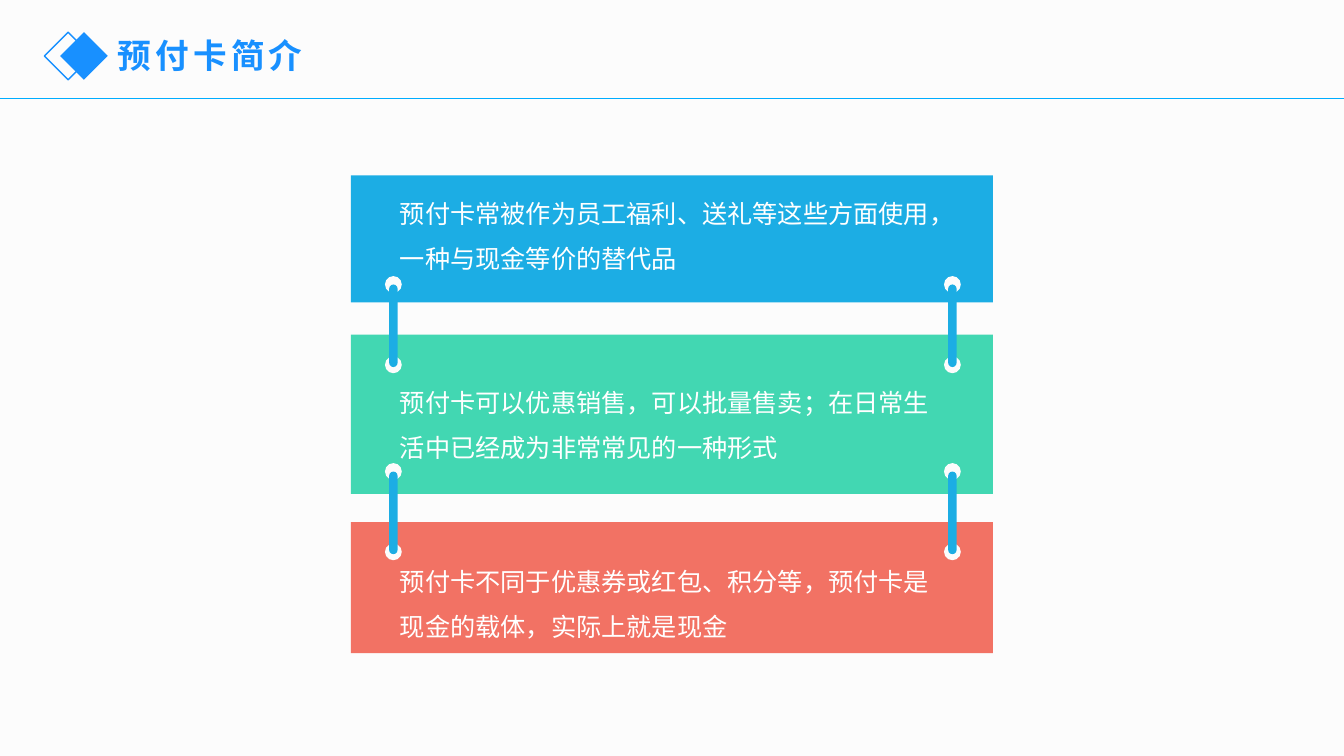
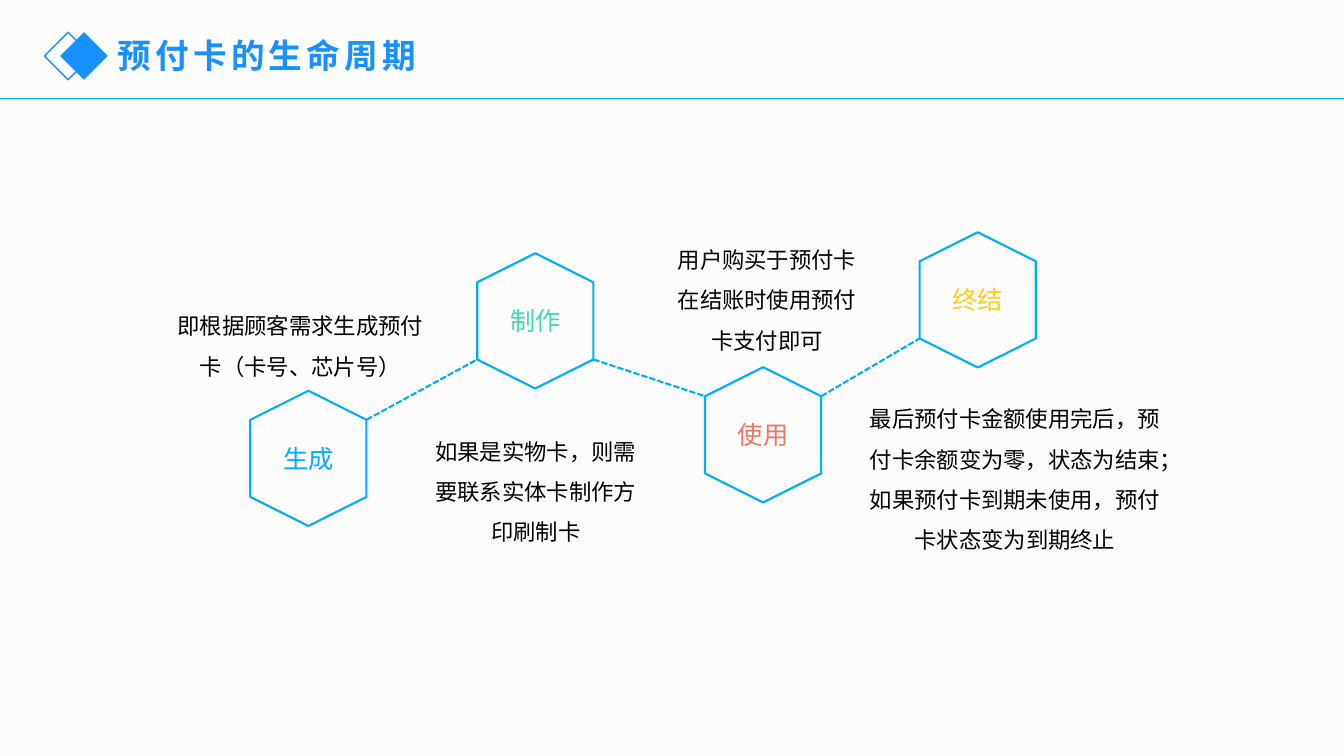
from dataclasses import dataclass
from itertools import pairwise, product

from lxml import etree
from pptx import Presentation
from pptx.dml.color import RGBColor
from pptx.enum import dml, shapes, text
from pptx.oxml.ns import qn
from pptx.util import Pt


@dataclass(frozen=True)
class Theme:
    font: str = "Noto Sans CJK SC"
    paper: str = "FCFCFC"
    heading: str = "1890FF"
    outline: str = "00ADFF"
    blue: str = "1CADE4"
    green: str = "42D7B2"
    red: str = "F27264"
    yellow: str = "FFCC21"
    white: str = "FFFFFF"
    black: str = "000000"
    title_size: int = 24
    body_size: int = 18
    note_size: int = 16


THEME = Theme()
SLIDE_W, SLIDE_H = 960, 540
SHAPE = shapes.MSO_SHAPE
ALIGN = text.PP_ALIGN

BAND_LEFT, BAND_W = 250.6, 458.6
# top, height, colour, text top, text width, wording
BANDS = [
    (125.3, 90.7, THEME.blue, 127.4, 421,
     "预付卡常被作为员工福利、送礼等这些方面使用，一种与现金等价的替代品"),
    (239, 113.8, THEME.green, 262.1, 408,
     "预付卡可以优惠销售，可以批量售卖；在日常生活中已经成为非常常见的一种形式"),
    (373, 93.6, THEME.red, 390.2, 395,
     "预付卡不同于优惠券或红包、积分等，预付卡是现金的载体，实际上就是现金"),
]
LINK_CENTRES, LINK_TOPS = (281, 680.3), (197.2, 330.8)
RING, RING_GAP = 12, 57.4
PIN_W, PIN_H = 6, 59

HEX_LENGTH, HEX_W = 96.6, 83
HEX_HALF_SIDE = HEX_LENGTH / 2 - HEX_W / 4
# hexagon centre, label, colour, note box, note
STAGES = [
    (220.3, 327.4, "生成", THEME.outline, (116.6, 210.2, 196, 61),
     "即根据顾客需求生成预付卡（卡号、芯片号）"),
    (382.4, 229.2, "制作", THEME.green, (301, 299.5, 163.4, 90),
     "如果是实物卡，则需要联系实体卡制作方印刷制卡"),
    (545.1, 310.6, "使用", THEME.red, (470.2, 162.7, 155.5, 90),
     "用户购买于预付卡在结账时使用预付卡支付即可"),
    (698.4, 214.2, "终结", THEME.yellow, (612, 276.5, 226, 119),
     "最后预付卡金额使用完后，预付卡余额变为零，状态为结束；"
     "如果预付卡到期未使用，预付卡状态变为到期终止"),
]


def rgb(value):
    return RGBColor.from_string(value)


def points(*lengths):
    return [Pt(length) for length in lengths]


def write(frame, wording, size, color, align=ALIGN.LEFT, spacing=1.0,
          anchor=text.MSO_ANCHOR.TOP):
    """Fill a text frame with one paragraph and return its run."""
    frame.text = wording
    frame.word_wrap = True
    frame.auto_size = text.MSO_AUTO_SIZE.NONE
    frame.vertical_anchor = anchor
    paragraph = frame.paragraphs[0]
    paragraph.alignment = align
    paragraph.line_spacing = spacing
    run = paragraph.runs[0]
    run.font.size = Pt(size)
    run.font.name = THEME.font
    run.font.color.rgb = rgb(color)
    east_asian = etree.SubElement(run.font._element, qn("a:ea"))
    east_asian.set("typeface", THEME.font)
    return run


def add_text(slide, box, *args, **kwargs):
    write(slide.shapes.add_textbox(*points(*box)).text_frame, *args, **kwargs)


def add_figure(slide, kind, box, fill=None, line=None, weight=1.5):
    figure = slide.shapes.add_shape(kind, *points(*box))
    figure.shadow.inherit = False
    if fill:
        figure.fill.solid()
        figure.fill.fore_color.rgb = rgb(fill)
    else:
        figure.fill.background()
    if line:
        figure.line.color.rgb = rgb(line)
        figure.line.width = Pt(weight)
    else:
        figure.line.fill.background()
    return figure


def add_line(slide, start, end, weight, dash=None):
    line = slide.shapes.add_connector(
        shapes.MSO_CONNECTOR.STRAIGHT, *points(*start, *end))
    line.line.color.rgb = rgb(THEME.outline)
    line.line.width = Pt(weight)
    if dash:
        line.line.dash_style = dash
    etree.SubElement(line._element.spPr, qn("a:effectLst"))
    return line


def add_header(slide):
    """Draw the rule and the twin diamonds, and move them to the layout."""
    layout = slide.slide_layout
    for placeholder in list(layout.placeholders):
        if placeholder.placeholder_format.type != shapes.PP_PLACEHOLDER.TITLE:
            placeholder._element.getparent().remove(placeholder._element)
    header = [
        add_line(slide, (0, 70.5), (SLIDE_W, 70.5), 1),
        add_figure(slide, SHAPE.DIAMOND, (31.7, 23, 34, 34),
                   line=THEME.heading, weight=1),
        add_figure(slide, SHAPE.DIAMOND, (43, 23, 34, 34), THEME.heading),
    ]
    for part in header:
        layout.shapes._spTree.append(part._element)


def add_titled_slide(prs, wording):
    slide = prs.slides.add_slide(prs.slide_layouts[5])
    title = slide.shapes.title
    title.left, title.top, title.width, title.height = points(77, 21.6, 395, 36)
    run = write(title.text_frame, wording, THEME.title_size, THEME.heading,
                anchor=text.MSO_ANCHOR.MIDDLE)
    run.font.bold = True
    run.font._element.set("spc", "300")
    return slide


def add_link(slide, centre, top):
    """Join two bands with a pin between two rings."""
    for ring_top in (top, top + RING_GAP):
        add_figure(slide, SHAPE.OVAL,
                   (centre - RING / 2, ring_top, RING, RING), THEME.paper)
    pin = add_figure(slide, SHAPE.ROUNDED_RECTANGLE,
                     (centre - PIN_W / 2, top + RING / 2, PIN_W, PIN_H),
                     THEME.blue)
    pin.adjustments[0] = 0.5


def fill_introduction(slide):
    for top, height, color, *_ in BANDS:
        add_figure(slide, SHAPE.RECTANGLE,
                   (BAND_LEFT, top, BAND_W, height), color)
    for top, centre in product(LINK_TOPS, LINK_CENTRES):
        add_link(slide, centre, top)
    for *_, text_top, width, wording in BANDS:
        add_text(slide, (278.6, text_top, width, 72), wording,
                 THEME.body_size, THEME.white, spacing=1.5)


def add_stage(slide, x, y, label, color, note_box, note):
    hexagon = add_figure(
        slide, SHAPE.HEXAGON,
        (x - HEX_LENGTH / 2, y - HEX_W / 2, HEX_LENGTH, HEX_W),
        line=THEME.outline)
    hexagon.rotation = 270
    add_text(slide, (x - 36, y - 14.4, 72, 28.8), label, THEME.body_size,
             color, ALIGN.CENTER, anchor=text.MSO_ANCHOR.MIDDLE)
    add_text(slide, note_box, note, THEME.note_size, THEME.black,
             ALIGN.CENTER, spacing=1.5)


def fill_life_cycle(slide):
    for stage in STAGES:
        add_stage(slide, *stage)
    for (x1, y1, *_), (x2, y2, *_) in pairwise(STAGES):
        drop = HEX_HALF_SIDE if y2 > y1 else -HEX_HALF_SIDE
        add_line(slide, (x1 + HEX_W / 2, y1 + drop),
                 (x2 - HEX_W / 2, y2 - drop), 1.5,
                 dml.MSO_LINE.SQUARE_DOT)


def main():
    prs = Presentation()
    prs.slide_width, prs.slide_height = points(SLIDE_W, SLIDE_H)
    background = prs.slide_master.background.fill
    background.solid()
    background.fore_color.rgb = rgb(THEME.paper)

    introduction = add_titled_slide(prs, "预付卡简介")
    add_header(introduction)
    fill_introduction(introduction)
    fill_life_cycle(add_titled_slide(prs, "预付卡的生命周期"))
    prs.save("out.pptx")


if __name__ == "__main__":
    main()
